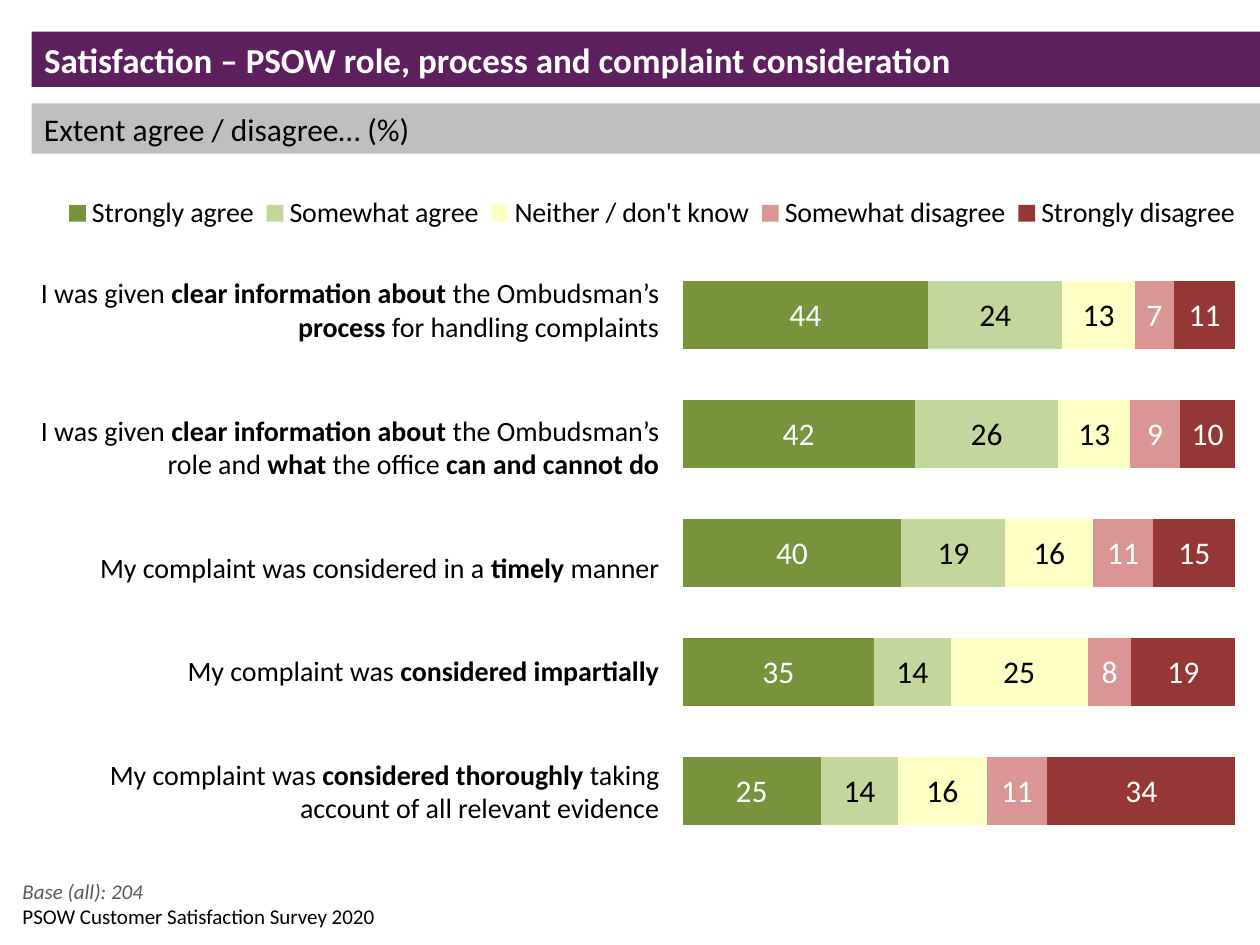
from collections import namedtuple

from lxml.etree import SubElement
from pptx import Presentation
from pptx.chart.data import CategoryChartData
from pptx.dml.color import RGBColor
from pptx.enum.chart import XL_CHART_TYPE, XL_LABEL_POSITION, XL_LEGEND_POSITION
from pptx.enum.shapes import MSO_SHAPE
from pptx.enum.text import MSO_ANCHOR, PP_ALIGN
from pptx.oxml import parse_xml
from pptx.oxml.ns import nsdecls, qn
from pptx.util import Inches, Pt

Box = namedtuple("Box", "left top width height")
FONT = "Calibri"
COLORS = {
    "purple": "5D1F5E",
    "band": "BFBFBF",
    "white": "FFFFFF",
    "black": "000000",
    "note": "595959",
    "strong_agree": "77933C",
    "some_agree": "C3D69B",
    "neither": "FEFFC5",
    "some_disagree": "D99694",
    "strong_disagree": "953735",
}
SERIES = [
    ("Strongly agree", (44, 42, 40, 35, 25), "strong_agree", "white"),
    ("Somewhat agree", (24, 26, 19, 14, 14), "some_agree", "black"),
    ("Neither / don't know", (13, 13, 16, 25, 16), "neither", "black"),
    ("Somewhat disagree", (7, 9, 11, 8, 11), "some_disagree", "white"),
    ("Strongly disagree", (11, 10, 15, 19, 34), "strong_disagree", "white"),
]
STATEMENTS = [
    "I was given *clear information about *the Ombudsman’s *process* for handling complaints",
    "I was given *clear information about *the Ombudsman’s role and *what* the office *can and cannot do*",
    "My complaint was considered in a *timely* manner",
    "My complaint was *considered impartially*",
    "My complaint was *considered thoroughly *taking account of all relevant evidence",
]


def rgb(name):
    return RGBColor.from_string(COLORS[name])


def inches(box):
    return [Inches(v) for v in box]


def style_font(font, size, color="black", bold=False, italic=False):
    font.name = FONT
    font.size = Pt(size)
    font.bold = bold
    font.italic = italic
    font.color.rgb = rgb(color)


def add_text(p, text, align=PP_ALIGN.LEFT, **fmt):
    p.alignment = align
    r = p.add_run()
    r.text = text
    style_font(r.font, **fmt)


def add_text_box(s, box, anchor=MSO_ANCHOR.TOP):
    tf = s.shapes.add_textbox(*inches(box)).text_frame
    tf.word_wrap = True
    tf.vertical_anchor = anchor
    return tf


def fill_bar(sp, fill, text, **fmt):
    sp.fill.solid()
    sp.fill.fore_color.rgb = rgb(fill)
    sp.line.fill.background()
    tf = sp.text_frame
    tf.word_wrap = True
    tf.vertical_anchor = MSO_ANCHOR.MIDDLE
    add_text(tf.paragraphs[0], text, **fmt)


def add_header(s, box):
    title = s.shapes.title
    title.left, title.top, title.width, title.height = inches(box._replace(height=0.44))
    fill_bar(title, "purple", "Satisfaction – PSOW role, process and complaint consideration",
             size=20, color="white", bold=True)
    band = Box(box.left, box.top + 0.57, box.width, box.height - 0.57)
    sp = s.shapes.add_shape(MSO_SHAPE.RECTANGLE, *inches(band))
    sp.shadow.inherit = False
    fill_bar(sp, "band", "Extent agree / disagree… (%)", size=18)


def set_layout(parent, index, box, inner=False):
    for old in parent.findall(qn("c:layout")):
        parent.remove(old)
    layout = parse_xml(f"<c:layout {nsdecls('c')}><c:manualLayout/></c:layout>")
    settings = [("layoutTarget", "inner")] if inner else []
    settings += [("xMode", "edge"), ("yMode", "edge")]
    settings += zip("xywh", box)
    for tag, value in settings:
        SubElement(layout[0], qn(f"c:{tag}")).set("val", str(value))
    parent.insert(index, layout)


def add_agreement_chart(s, box):
    data = CategoryChartData()
    data.categories = ["1", "2", "3", "4", "5"]
    for name, values, _, _ in SERIES:
        data.add_series(name, values)
    chart = s.shapes.add_chart(XL_CHART_TYPE.BAR_STACKED_100, *inches(box), data).chart
    style_font(chart.font, 18)
    chart.has_title = False
    chart.category_axis.reverse_order = True
    chart.category_axis.visible = False
    chart.value_axis.has_major_gridlines = False
    chart.value_axis.visible = False

    plot = chart.plots[0]
    plot.gap_width = 75
    plot.overlap = 100
    plot.vary_by_categories = False
    for series, (_, _, color, label_color) in zip(plot.series, SERIES):
        series.format.fill.solid()
        series.format.fill.fore_color.rgb = rgb(color)
        labels = series.data_labels
        labels.show_value = True
        labels.position = XL_LABEL_POSITION.CENTER
        style_font(labels.font, 18, label_color)

    chart.has_legend = True
    chart.legend.position = XL_LEGEND_POSITION.TOP
    chart.legend.include_in_layout = False
    style_font(chart.legend.font, 16)
    root = chart.element
    set_layout(root.find(".//" + qn("c:plotArea")), 0, Box(0.53, 0.12, 0.45, 0.85), inner=True)
    set_layout(root.find(".//" + qn("c:legend")), 1, Box(0.02, 0.02, 0.97, 0.08))


def add_statements(s, box):
    tf = add_text_box(s, box)
    for i, statement in enumerate(STATEMENTS):
        p = tf.add_paragraph() if i else tf.paragraphs[0]
        if i:
            p.space_before = Pt(40)
        for j, part in enumerate(statement.split("*")):
            if part:
                add_text(p, part, align=PP_ALIGN.RIGHT, size=16, bold=j % 2 == 1)


def add_footer(s, box):
    base = add_text_box(s, box._replace(height=0.3))
    add_text(base.paragraphs[0], "Base (all): 204", size=12, color="note", italic=True)
    survey = add_text_box(s, box, anchor=MSO_ANCHOR.BOTTOM)
    add_text(survey.paragraphs[0], "PSOW Customer Satisfaction Survey 2020", size=12)


def main():
    prs = Presentation()
    prs.slide_width, prs.slide_height = Inches(10), Inches(7.5)
    s = prs.slides.add_slide(prs.slide_layouts[5])
    add_header(s, Box(0.25, 0.25, 9.75, 0.97))
    add_agreement_chart(s, Box(0.25, 1.36, 9.75, 5.56))
    add_statements(s, Box(0.08, 2.14, 5.25, 4.61))
    add_footer(s, Box(0.08, 6.92, 5.25, 0.5))
    prs.save("out.pptx")


if __name__ == "__main__":
    main()
